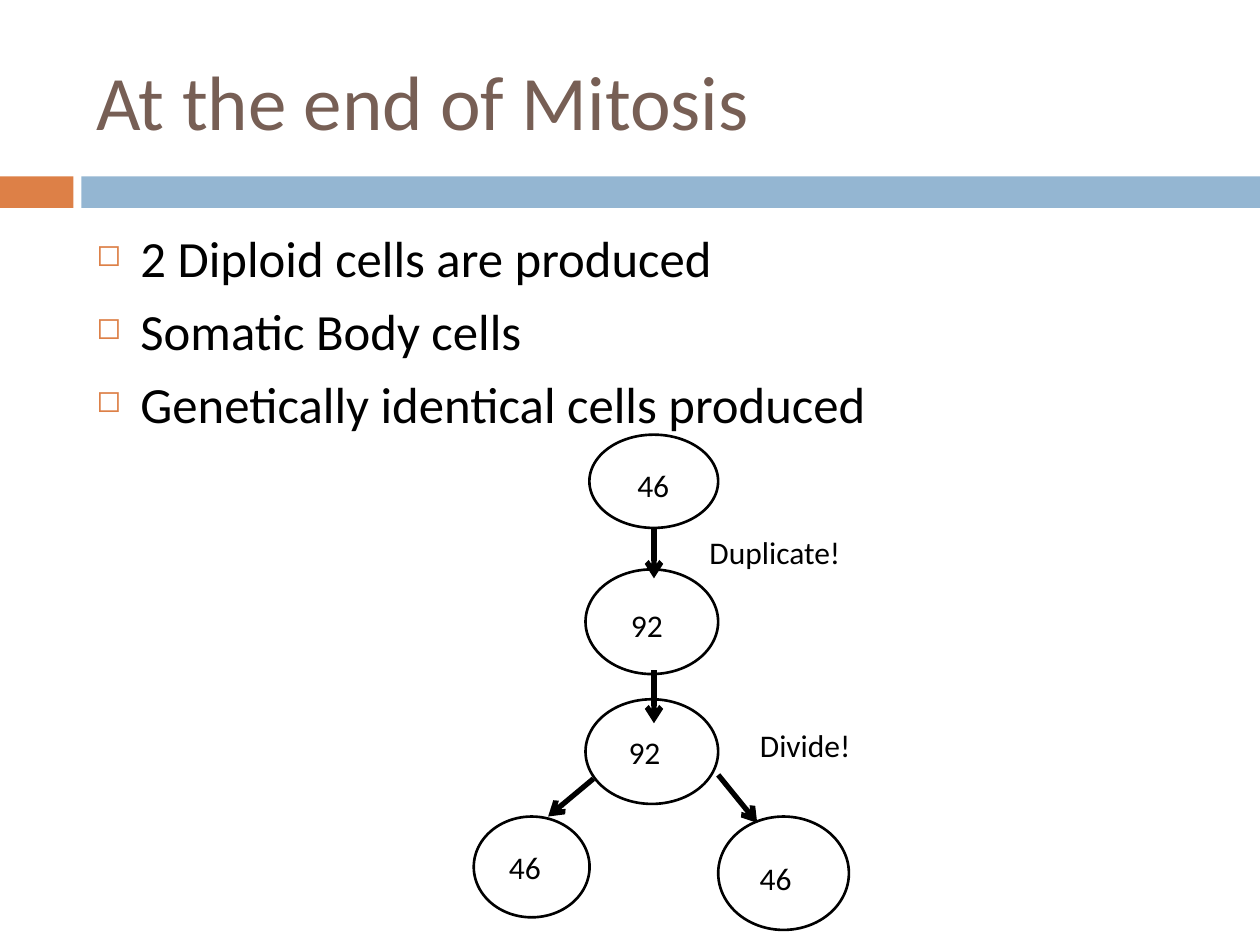
from typing import NamedTuple

from lxml.etree import SubElement
from pptx import Presentation
from pptx.dml.color import RGBColor
from pptx.enum.shapes import MSO_CONNECTOR, MSO_SHAPE
from pptx.enum.text import MSO_ANCHOR, PP_ALIGN
from pptx.oxml.ns import qn
from pptx.util import Pt

FONT = "Calibri"
BLACK, BROWN, ORANGE, BLUE = "000000", "775F55", "DD8047", "94B6D2"


class Box(NamedTuple):
    left: float
    top: float
    width: float
    height: float


class Cell(NamedTuple):
    outline: Box
    count: str
    count_left: float
    count_top: float


class Arrow(NamedTuple):
    x1: float
    y1: float
    x2: float
    y2: float


class Step(NamedTuple):
    text: str
    left: float
    top: float


CELLS = [
    Cell(Box(336.8, 248.4, 73.6, 53.3), "46", 357.1, 262.8),
    Cell(Box(334.6, 325.4, 75.8, 59.8), "92", 353.5, 342.7),
    Cell(Box(334.6, 399.6, 75.8, 59.8), "92", 352.1, 415.4),
    Cell(Box(270.7, 466.6, 66.2, 57.6), "46", 283.7, 481),
    Cell(Box(410.4, 466.6, 74.7, 64.8), "46", 427, 487.4),
]
ARROWS = [
    Arrow(373.7, 301, 373.7, 330.5),
    Arrow(373.7, 383, 373.7, 413.3),
    Arrow(339.1, 445, 313.2, 466.6),
    Arrow(410.4, 442.8, 432.7, 470.2),
]
STEPS = [Step("Duplicate!", 393.1, 301), Step("Divide!", 410.4, 411.1)]
POINTS = [
    "2 Diploid cells are produced",
    "Somatic Body cells",
    "Genetically identical cells produced",
]


def rgb(value: str) -> RGBColor:
    return RGBColor.from_string(value)


def add_bullet(p) -> None:
    pPr = p._p.get_or_add_pPr()
    pPr.set("marL", str(Pt(25.2)))
    pPr.set("indent", str(-Pt(25.2)))
    color = SubElement(pPr, qn("a:buClr"))
    SubElement(color, qn("a:srgbClr"), val=ORANGE)
    SubElement(pPr, qn("a:buSzPct"), val="60000")
    SubElement(pPr, qn("a:buChar"), char="◻")


def add_text(s, box: Box, *lines: str, size: float = 18, color: str = BLACK,
             align=PP_ALIGN.LEFT, anchor=MSO_ANCHOR.TOP,
             before: float = 0, bullets: bool = False) -> None:
    tf = s.shapes.add_textbox(*map(Pt, box)).text_frame
    tf.word_wrap = True
    tf.vertical_anchor = anchor
    for i, line in enumerate(lines):
        p = tf.add_paragraph() if i else tf.paragraphs[0]
        p.alignment = align
        p.space_before = Pt(before)
        if bullets:
            add_bullet(p)
        r = p.add_run()
        r.text = line
        r.font.name = FONT
        r.font.size = Pt(size)
        r.font.color.rgb = rgb(color)


def add_bar(s, box: Box, color: str) -> None:
    sp = s.shapes.add_shape(MSO_SHAPE.RECTANGLE, *map(Pt, box))
    sp.shadow.inherit = False
    sp.fill.solid()
    sp.fill.fore_color.rgb = rgb(color)
    sp.line.fill.background()


def add_cell(s, cell: Cell) -> None:
    sp = s.shapes.add_shape(MSO_SHAPE.OVAL, *map(Pt, cell.outline))
    sp.shadow.inherit = False
    sp.fill.background()
    sp.line.color.rgb = rgb(BLACK)
    sp.line.width = Pt(1.5)
    add_text(s, Box(cell.count_left, cell.count_top, 41, 29), cell.count)


def add_arrow(s, arrow: Arrow) -> None:
    line = s.shapes.add_connector(MSO_CONNECTOR.STRAIGHT, *map(Pt, arrow))
    line.line.color.rgb = rgb(BLACK)
    line.line.width = Pt(3)
    SubElement(line.line._get_or_add_ln(), qn("a:tailEnd"), type="arrow")
    SubElement(line._element.spPr, qn("a:effectLst"))


def main() -> None:
    prs = Presentation()
    prs.slide_width, prs.slide_height = Pt(720), Pt(540)
    s = prs.slides.add_slide(prs.slide_layouts[6])

    add_bar(s, Box(0, 100.8, 42, 18), ORANGE)
    add_bar(s, Box(46.5, 100.8, 673.5, 18), BLUE)
    add_text(s, Box(48, 18, 642, 78), "At the end of Mitosis",
             size=44, color=BROWN, anchor=MSO_ANCHOR.MIDDLE)
    add_text(s, Box(48, 126, 642, 354), *POINTS, size=29, before=7, bullets=True)

    for cell in CELLS:
        add_cell(s, cell)
    for arrow in ARROWS:
        add_arrow(s, arrow)
    for step in STEPS:
        add_text(s, Box(step.left, step.top, 99.4, 29), step.text,
                 align=PP_ALIGN.CENTER)

    prs.save("out.pptx")


if __name__ == "__main__":
    main()
